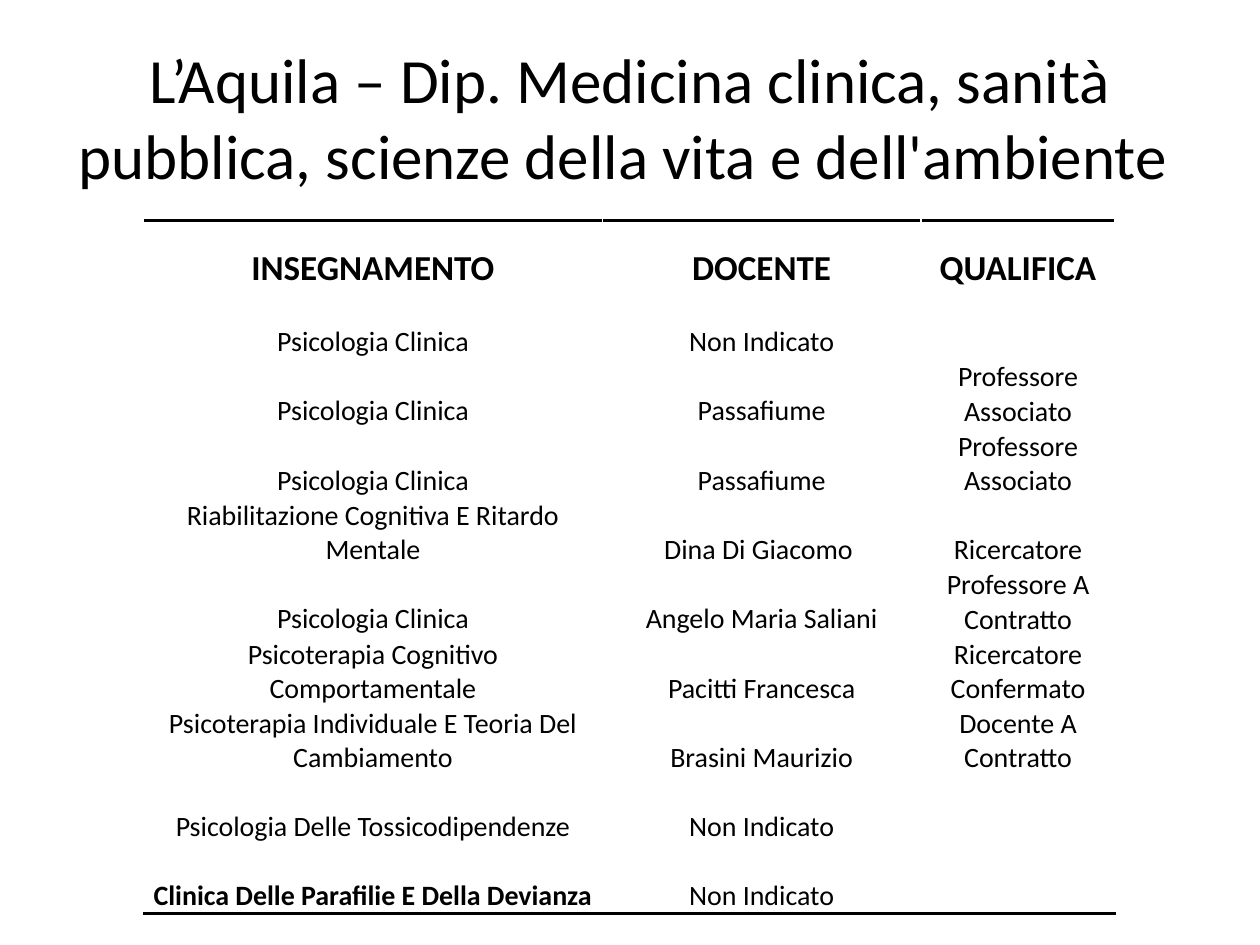
from lxml import etree
from pptx import Presentation
from pptx.dml.color import RGBColor
from pptx.enum.text import MSO_ANCHOR, PP_ALIGN
from pptx.oxml.ns import qn
from pptx.util import Inches, Pt

CENTER = PP_ALIGN.CENTER
MIDDLE, BOTTOM = MSO_ANCHOR.MIDDLE, MSO_ANCHOR.BOTTOM
FONT, BLACK, WHITE = "Calibri", "000000", "FFFFFF"

TITLE = ("L’Aquila – Dip. Medicina clinica, sanità pubblica, "
         "scienze della vita e dell'ambiente ")
WIDTHS = [3.64, 2.53, 1.54]
ROWS = [
    ("INSEGNAMENTO", "DOCENTE", "QUALIFICA"),
    ("Psicologia Clinica", "Non Indicato", ""),
    ("Psicologia Clinica", "Passafiume", "Professore Associato"),
    ("Psicologia Clinica", "Passafiume", "Professore Associato"),
    ("Riabilitazione Cognitiva E Ritardo Mentale", "Dina Di Giacomo ", "Ricercatore"),
    ("Psicologia Clinica", "Angelo Maria Saliani", "Professore A Contratto"),
    ("Psicoterapia Cognitivo Comportamentale", "Pacitti Francesca",
     "Ricercatore Confermato"),
    ("Psicoterapia Individuale E Teoria Del Cambiamento", "Brasini Maurizio",
     "Docente A Contratto"),
    ("Psicologia Delle Tossicodipendenze", "Non Indicato", ""),
    ("Clinica Delle Parafilie E Della Devianza", "Non Indicato", ""),
]


def color(code):
    return RGBColor.from_string(code)


def write(para, text, size, bold=False):
    para.text = text
    para.alignment = CENTER
    font = para.font
    font.name, font.size, font.bold = FONT, Pt(size), bold
    font.color.rgb = color(BLACK)


def rule(cell, side):
    """Draw a 2 pt black border on one side: lnT or lnB."""
    line = etree.Element(qn("a:" + side), w=str(Pt(2)))
    fill = etree.SubElement(line, qn("a:solidFill"))
    etree.SubElement(fill, qn("a:srgbClr"), val=BLACK)
    cell._tc.get_or_add_tcPr().insert(0, line)


def add_title(slide, left, top, width, height):
    box = slide.shapes.add_textbox(
        Inches(left), Inches(top), Inches(width), Inches(height))
    frame = box.text_frame
    frame.word_wrap = True
    frame.vertical_anchor = MIDDLE
    write(frame.paragraphs[0], TITLE, 36)


def add_courses(slide, left, top, width, height):
    table = slide.shapes.add_table(
        len(ROWS), len(WIDTHS), Inches(left), Inches(top),
        Inches(width), Inches(height)).table
    table.first_row = table.horz_banding = False
    for col, share in zip(table.columns, WIDTHS):
        col.width = Inches(width * share / sum(WIDTHS))
    last = len(ROWS) - 1
    for r, row in enumerate(ROWS):
        for c, text in enumerate(row):
            cell = table.cell(r, c)
            cell.fill.solid()
            cell.fill.fore_color.rgb = color(WHITE)
            cell.vertical_anchor = BOTTOM
            cell.margin_left = cell.margin_right = cell.margin_top = Inches(0.01)
            cell.margin_bottom = 0
            bold = r == 0 or (r == last and c == 0)
            write(cell.text_frame.paragraphs[0], text, 20 if r == 0 else 16, bold)
            if r == 0:
                rule(cell, "lnT")
            elif r == last:
                rule(cell, "lnB")


def main():
    deck = Presentation()
    deck.slide_width, deck.slide_height = Inches(10), Inches(7.5)
    slide = deck.slides.add_slide(deck.slide_layouts[6])
    add_title(slide, 0.5, 0.3, 9, 1.25)
    add_courses(slide, 1.14, 1.75, 7.71, 5.5)
    deck.save("out.pptx")


if __name__ == "__main__":
    main()
